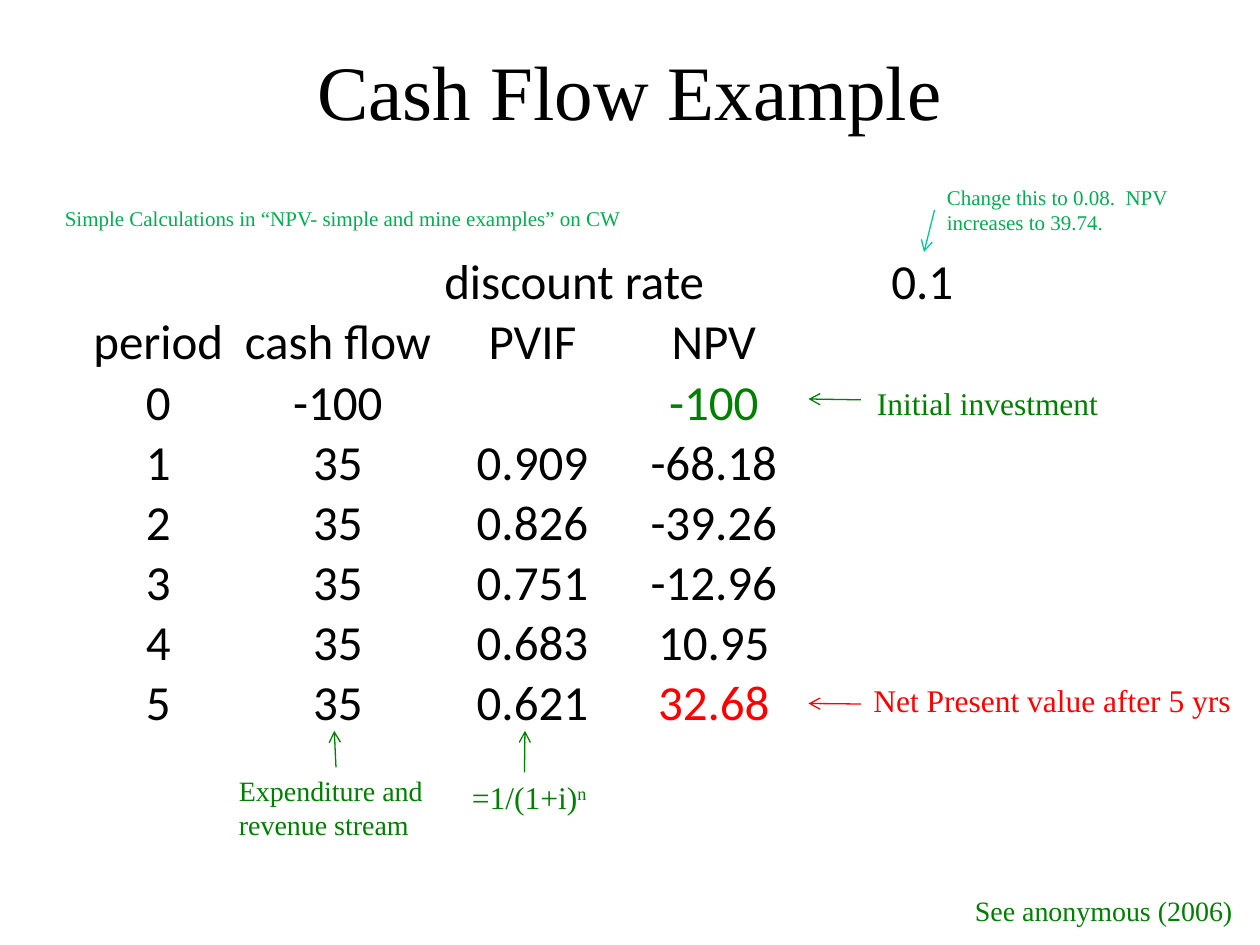
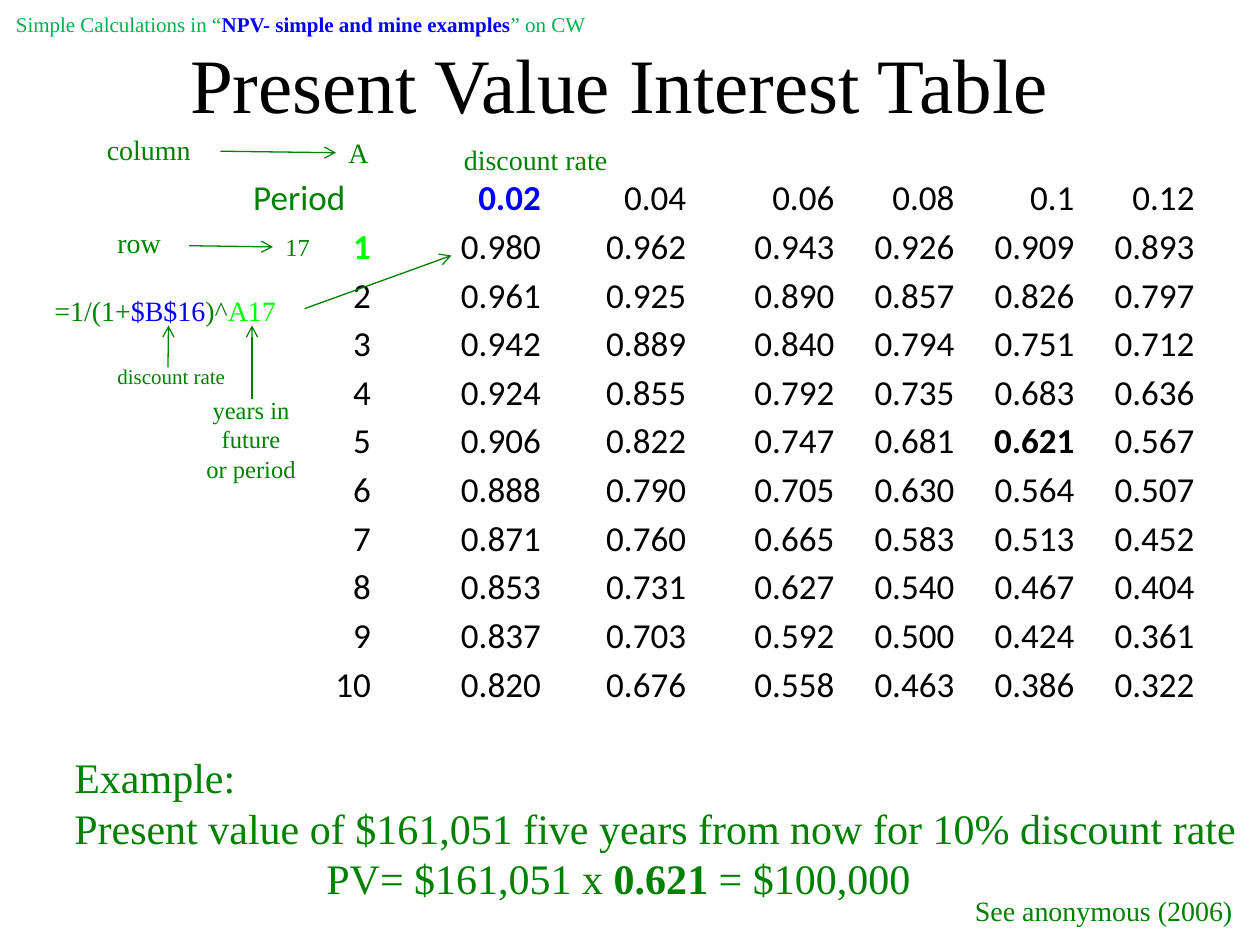
from dataclasses import dataclass

import pptx
import pptx.dml.color
import pptx.enum.shapes
import pptx.enum.text
import pptx.oxml
import pptx.oxml.ns
import pptx.util

Pt = pptx.util.Pt
ALIGN = pptx.enum.text.PP_ALIGN
ANCHOR = pptx.enum.text.MSO_ANCHOR
TOP, LEFT = 0, 1


@dataclass(frozen=True)
class Theme:
    black: str = "000000"
    green: str = "008000"
    note_green: str = "00B050"
    bright_green: str = "00FF00"
    teal: str = "00C896"
    blue: str = "0000FF"
    red: str = "FF0000"
    serif: str = "Times New Roman"
    sans: str = "Calibri"
    title: int = 44
    cash_table: int = 28
    example: int = 24
    factor_table: int = 20
    label: int = 18
    small: int = 16
    caption: int = 14
    note: int = 12
    line: float = 0.75


THEME = Theme()


def write(frame, paragraphs, *, align=ALIGN.LEFT, indents=(), **style):
    """Fill a frame; a paragraph is a string or a list of (text, style changes) runs."""
    for index, content in enumerate(paragraphs):
        paragraph = frame.add_paragraph() if index else frame.paragraphs[0]
        paragraph.alignment = align
        if index < len(indents) and indents[index]:
            paragraph._p.get_or_add_pPr().set("marL", str(Pt(indents[index])))
        runs = [(content, {})] if isinstance(content, str) else content
        for text, changes in runs:
            look = {**style, **changes}
            run = paragraph.add_run()
            run.text = text
            run.font.name = look.get("font", THEME.serif)
            run.font.size = Pt(look["size"])
            run.font.bold = look.get("bold", False)
            color = look.get("color", THEME.black)
            run.font.color.rgb = pptx.dml.color.RGBColor.from_string(color)
            if look.get("superscript"):
                run._r.get_or_add_rPr().set("baseline", "30000")


class Deck:
    def __init__(self, theme):
        self.theme = theme
        self.presentation = pptx.Presentation()
        self.presentation.slide_width = Pt(720)
        self.presentation.slide_height = Pt(540)
        self.slide = None

    def start_slide(self, title, left, top):
        blank = self.presentation.slide_layouts[6]
        self.slide = self.presentation.slides.add_slide(blank)
        self.text([title], left, top, 612, 90, wrap=True, grow=False,
                  anchor=ANCHOR.MIDDLE, align=ALIGN.CENTER,
                  size=self.theme.title, color=self.theme.black)
        self.text(["See anonymous (2006)"], 550, 507, 163.5, 26.6)

    def text(self, paragraphs, left, top, width, height, *, wrap=False,
             grow=True, anchor=ANCHOR.TOP, **style):
        box = self.slide.shapes.add_textbox(Pt(left), Pt(top), Pt(width), Pt(height))
        frame = box.text_frame
        frame.word_wrap = wrap
        frame.vertical_anchor = anchor
        sizing = pptx.enum.text.MSO_AUTO_SIZE
        frame.auto_size = sizing.SHAPE_TO_FIT_TEXT if grow else sizing.NONE
        write(frame, paragraphs,
              **{"size": self.theme.small, "color": self.theme.green, **style})
        return box

    def arrow(self, start, end, *, color=None, begin=None, finish=None):
        """Draw an arrow; begin and finish are (box, side) joins."""
        line = self.slide.shapes.add_connector(
            pptx.enum.shapes.MSO_CONNECTOR.STRAIGHT, *map(Pt, start + end))
        if begin:
            line.begin_connect(*begin)
        if finish:
            line.end_connect(*finish)
        line.line.width = Pt(self.theme.line)
        line.line.color.rgb = pptx.dml.color.RGBColor.from_string(
            color or self.theme.green)
        tail = pptx.oxml.parse_xml(
            f'<a:tailEnd {pptx.oxml.ns.nsdecls("a")} type="arrow"/>')
        line.line._get_or_add_ln().append(tail)
        line._element.spPr.append(pptx.oxml.parse_xml(
            f'<a:effectLst {pptx.oxml.ns.nsdecls("a")}/>'))

    def table(self, rows, left, top, widths, row_height, *, size, align,
              merges=(), special=None):
        """Draw plain rows; special maps (row, column) to style changes."""
        table = self.slide.shapes.add_table(
            len(rows), len(widths), Pt(left), Pt(top),
            Pt(sum(widths)), Pt(row_height * len(rows))).table
        table.first_row = table.horz_banding = False
        for column, width in zip(table.columns, widths):
            column.width = Pt(width)
        for r, values in enumerate(rows):
            table.rows[r].height = Pt(row_height)
            for c, value in enumerate(values):
                cell = table.cell(r, c)
                cell.fill.background()
                cell.vertical_anchor = ANCHOR.BOTTOM
                cell.margin_left = cell.margin_right = cell.margin_top = Pt(0.72)
                cell.margin_bottom = Pt(0)
                if value:
                    write(cell.text_frame, [value], **{
                        "font": self.theme.sans, "size": size, "align": align,
                        **(special or {}).get((r, c), {})})
        for first, last in merges:
            table.cell(*first).merge(table.cell(*last))


def present_value_factor(rate, period):
    return 1 / (1 + rate) ** period


def cash_flow_rows(rate, investment, income, periods):
    rows = [["", "", "discount rate", "", str(rate)],
            ["period", "cash flow", "PVIF", "NPV", ""],
            ["0", str(investment), "", str(investment), ""]]
    value = investment
    for period in range(1, periods + 1):
        factor = present_value_factor(rate, period)
        value += income * factor
        rows.append([str(period), str(income), f"{factor:.3f}", f"{value:.2f}", ""])
    return rows


def cash_flow_slide(deck):
    theme = deck.theme
    deck.start_slide("Cash Flow Example", 54, 6)
    deck.table(cash_flow_rows(0.1, -100, 35, 5), 48, 144,
               [85, 120.2, 102.2, 105.1, 85], 33.12,
               size=theme.cash_table, align=ALIGN.CENTER,
               merges=[((0, 2), (0, 3))],
               special={(0, 2): {"align": ALIGN.LEFT},
                        (0, 4): {"align": ALIGN.RIGHT},
                        (2, 3): {"color": theme.green},
                        (7, 3): {"color": theme.red}})

    deck.text(["Initial investment"], 494, 216, 142.5, 29, size=theme.label)
    deck.arrow((492, 228.5), (462, 228))
    deck.text(["Net Present value after 5 yrs"], 492, 385.5, 221, 29,
              size=theme.label, color=theme.red)
    deck.arrow((492, 402.3), (462, 402), color=theme.red)

    stream = deck.text(["Expenditure and", "revenue stream"], 129.5, 438.5, 125, 46)
    deck.arrow((192, 438.5), (191, 417.6), begin=(stream, TOP))
    deck.text([[("=1/(1+i)", {}), ("n", {"superscript": True})]],
              262.6, 441, 81.4, 29, size=theme.label)
    deck.arrow((299.7, 441.4), (300, 417.6))

    deck.text(["Simple Calculations in “NPV- simple and mine examples” on CW"],
              30, 114, 333, 21.8, size=theme.note, color=theme.note_green)
    change = deck.text(["Change this to 0.08.  NPV increases to 39.74."],
                       534, 102, 168, 36, wrap=True,
                       size=theme.note, color=theme.note_green)
    deck.arrow((534, 120), (528, 144), color=theme.teal, begin=(change, LEFT))


def interest_table_slide(deck):
    theme = deck.theme
    deck.start_slide("Present Value Interest Table", 48, 2)
    rates = [0.02, 0.04, 0.06, 0.08, 0.1, 0.12]
    rows = [["Period", *map(str, rates)]]
    for period in range(1, 11):
        factors = [f"{present_value_factor(rate, period):.3f}" for rate in rates]
        rows.append([str(period), *factors])
    deck.table(rows, 144, 98, [68.6, 97.2, 83, 84.7, 68.6, 68.6, 68.6], 27.82,
               size=theme.factor_table, align=ALIGN.RIGHT,
               special={(0, 0): {"align": ALIGN.LEFT, "color": theme.green},
                        (0, 1): {"color": theme.blue, "bold": True},
                        (1, 0): {"color": theme.bright_green, "bold": True},
                        (5, 5): {"bold": True}})

    deck.text(["column"], 54, 72, 63.5, 26.6)
    column_letter = deck.text(["A"], 192, 74, 26, 26.6)
    deck.arrow((126, 86.4), (192, 86.4), finish=(column_letter, LEFT))
    deck.text(["row"], 60, 125.5, 39.5, 26.6)
    row_number = deck.text(["17"], 156, 129, 29, 24.2, size=theme.caption)
    deck.arrow((108, 140.4), (156, 140.4), finish=(row_number, LEFT))
    deck.text(["discount rate"], 258, 78, 101.5, 26.6)

    deck.text([[("=1/(1+", {}), ("$B$16", {"color": theme.blue}),
                (")^", {}), ("A17", {"color": theme.bright_green})]],
              24, 164, 142.5, 26.6)
    deck.arrow((174, 176.4), (258, 146))
    deck.text(["discount rate"], 60, 204, 77, 21.8, size=theme.note)
    deck.arrow((96, 210), (96.3, 186))
    deck.text(["years in future", "or period"], 105, 222, 77, 58, wrap=True,
              size=theme.caption, align=ALIGN.CENTER)
    deck.arrow((144, 228), (144, 186))

    deck.text(["Example:",
               "Present value of $161,051 five years from now for 10% discount rate",
               [("PV= $161,051 x ", {}), ("0.621", {"bold": True}),
                (" = $100,000", {})]],
              35.4, 426, 684.6, 94.5, size=theme.example, indents=(0, 0, 144))
    deck.text([[("Simple Calculations in “", {}),
                ("NPV- simple and mine examples", {"color": theme.blue, "bold": True}),
                ("” on CW", {})]],
              2, 3, 340.5, 21.8, size=theme.note, color=theme.note_green)


def main():
    deck = Deck(THEME)
    cash_flow_slide(deck)
    interest_table_slide(deck)
    deck.presentation.save("out.pptx")


if __name__ == "__main__":
    main()
